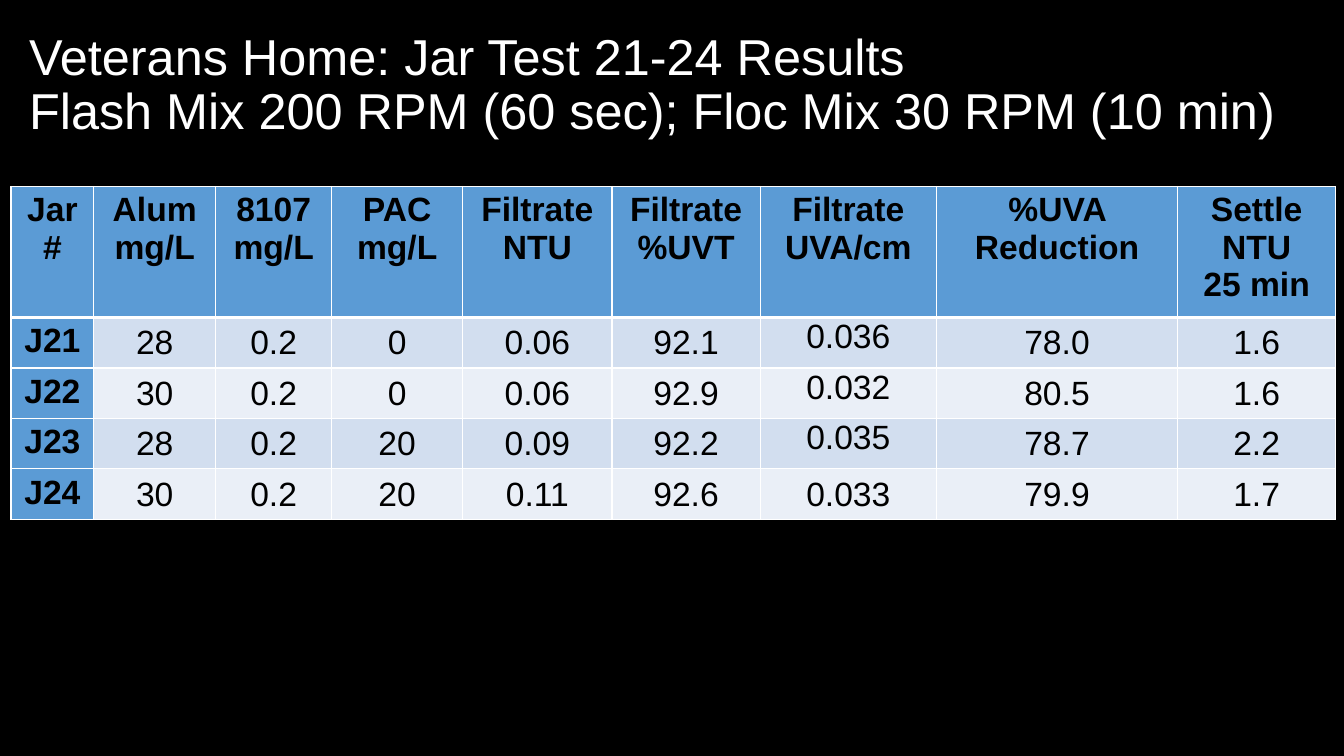
from dataclasses import dataclass

from lxml.etree import SubElement
from pptx import Presentation
from pptx.dml.color import RGBColor
from pptx.enum.text import MSO_ANCHOR, PP_ALIGN
from pptx.oxml.ns import qn
from pptx.util import Inches, Pt


@dataclass(frozen=True)
class Theme:
    font: str = "Arial"
    title_size: int = 36
    table_size: int = 24
    background: str = "000000"
    title: str = "FFFFFF"
    text: str = "000000"
    header: str = "5B9BD5"
    bands: tuple = ("D2DEEF", "EAEFF7")
    border: str = "FFFFFF"
    thin: int = 1
    thick: int = 3


THEME = Theme()
TITLE = "Veterans Home: Jar Test 21-24 Results\vFlash Mix 200 RPM (60 sec); Floc Mix 30 RPM (10 min)"
COLUMN_WIDTHS = (0.82, 1.21, 1.15, 1.3, 1.48, 1.47, 1.75, 2.39, 1.57)
HEADER_HEIGHT, ROW_HEIGHT = 1.22, 0.47
UVA_COLUMN = 6
JAR_TESTS = (
    ("Jar\n#", "Alum\nmg/L", "8107\nmg/L", "PAC\nmg/L", "Filtrate\nNTU", "Filtrate\n%UVT",
     "Filtrate\nUVA/cm", "%UVA Reduction", "Settle\nNTU\n25 min"),
    ("J21", "28", "0.2", "0", "0.06", "92.1", "0.036", "78.0", "1.6"),
    ("J22", "30", "0.2", "0", "0.06", "92.9", "0.032", "80.5", "1.6"),
    ("J23", "28", "0.2", "20", "0.09", "92.2", "0.035", "78.7", "2.2"),
    ("J24", "30", "0.2", "20", "0.11", "92.6", "0.033", "79.9", "1.7"),
)


def style_paragraph(paragraph, size, color, bold=False):
    paragraph.font.name = THEME.font
    paragraph.font.size = Pt(size)
    paragraph.font.bold = bold
    paragraph.font.color.rgb = RGBColor.from_string(color)


def set_borders(cell, top, bottom):
    properties = cell._tc.get_or_add_tcPr()
    widths = {"a:lnL": THEME.thin, "a:lnR": THEME.thin, "a:lnT": top, "a:lnB": bottom}
    for position, (tag, width) in enumerate(widths.items()):
        line = SubElement(properties, qn(tag), w=str(Pt(width)))
        fill = SubElement(line, qn("a:solidFill"))
        SubElement(fill, qn("a:srgbClr"), val=THEME.border)
        properties.insert(position, line)  # borders come before the fill


def add_title(slide, left, top, width, height):
    box = slide.shapes.add_textbox(Inches(left), Inches(top), Inches(width), Inches(height))
    frame = box.text_frame
    frame.word_wrap = True
    frame.vertical_anchor = MSO_ANCHOR.MIDDLE
    paragraph = frame.paragraphs[0]
    paragraph.text = TITLE
    paragraph.line_spacing = 0.9
    style_paragraph(paragraph, THEME.title_size, THEME.title)


def fill_cell(cell, text, row, column):
    is_heading = row == 0 or column == 0
    cell.text = text
    cell.fill.solid()
    color = THEME.header if is_heading else THEME.bands[(row - 1) % 2]
    cell.fill.fore_color.rgb = RGBColor.from_string(color)
    if not is_heading:
        cell.margin_left = cell.margin_right = cell.margin_top = Inches(0.01)
        cell.margin_bottom = 0
        # The UVA values sit at the top, except in the last row
        if column != UVA_COLUMN or row == len(JAR_TESTS) - 1:
            cell.vertical_anchor = MSO_ANCHOR.MIDDLE
    for paragraph in cell.text_frame.paragraphs:
        paragraph.alignment = PP_ALIGN.CENTER
        style_paragraph(paragraph, THEME.table_size, THEME.text, is_heading)
    set_borders(cell,
                top=THEME.thick if row == 1 else THEME.thin,
                bottom=THEME.thick if row == 0 else THEME.thin)


def add_results_table(slide, left, top):
    heights = [HEADER_HEIGHT] + [ROW_HEIGHT] * (len(JAR_TESTS) - 1)
    table = slide.shapes.add_table(
        len(heights), len(COLUMN_WIDTHS), Inches(left), Inches(top),
        Inches(sum(COLUMN_WIDTHS)), Inches(sum(heights))).table
    table.first_col = True
    for column, width in zip(table.columns, COLUMN_WIDTHS):
        column.width = Inches(width)
    for row, (values, height) in enumerate(zip(JAR_TESTS, heights)):
        table.rows[row].height = Inches(height)
        for column, text in enumerate(values):
            fill_cell(table.cell(row, column), text, row, column)


def main():
    presentation = Presentation()
    presentation.slide_width, presentation.slide_height = Inches(13.33), Inches(7.5)
    slide = presentation.slides.add_slide(presentation.slide_layouts[6])
    slide.background.fill.solid()
    slide.background.fill.fore_color.rgb = RGBColor.from_string(THEME.background)
    add_title(slide, 0.19, 0.13, 13.06, 1.45)
    add_results_table(slide, 0.11, 1.85)
    presentation.save("out.pptx")


if __name__ == "__main__":
    main()
